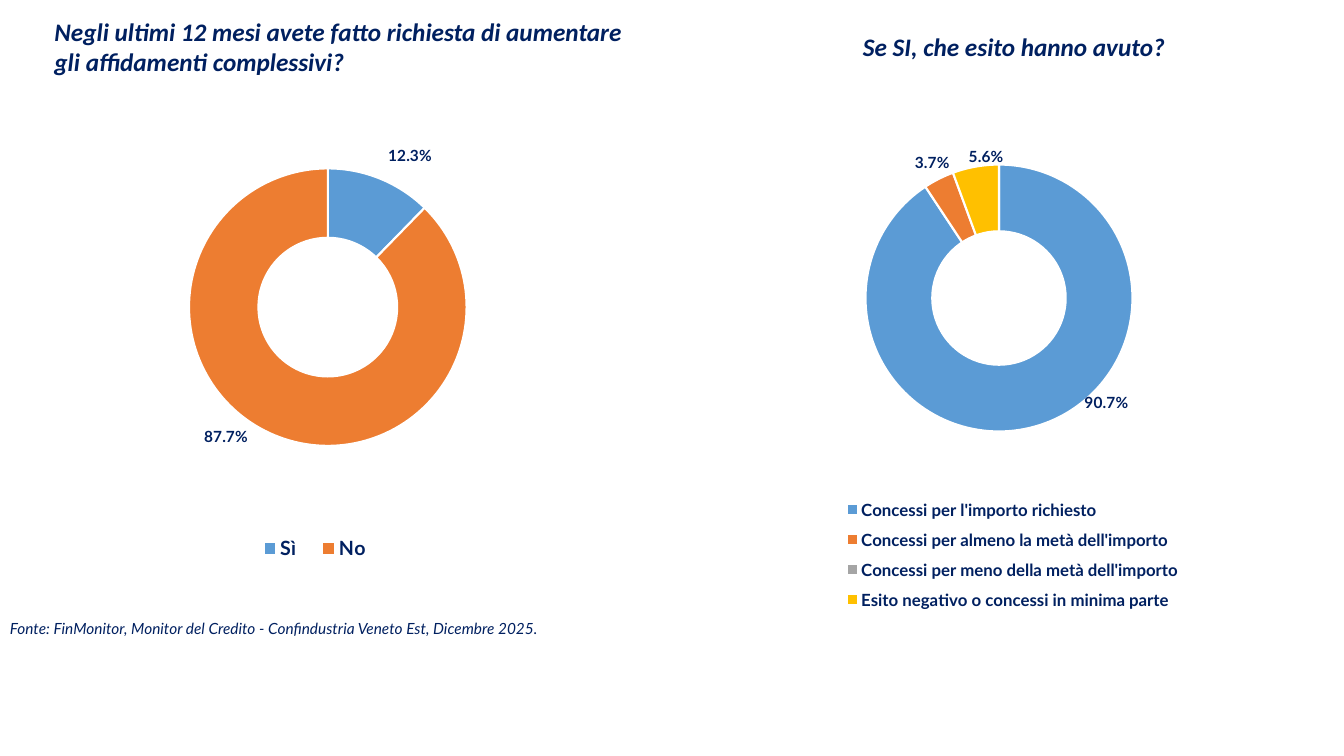
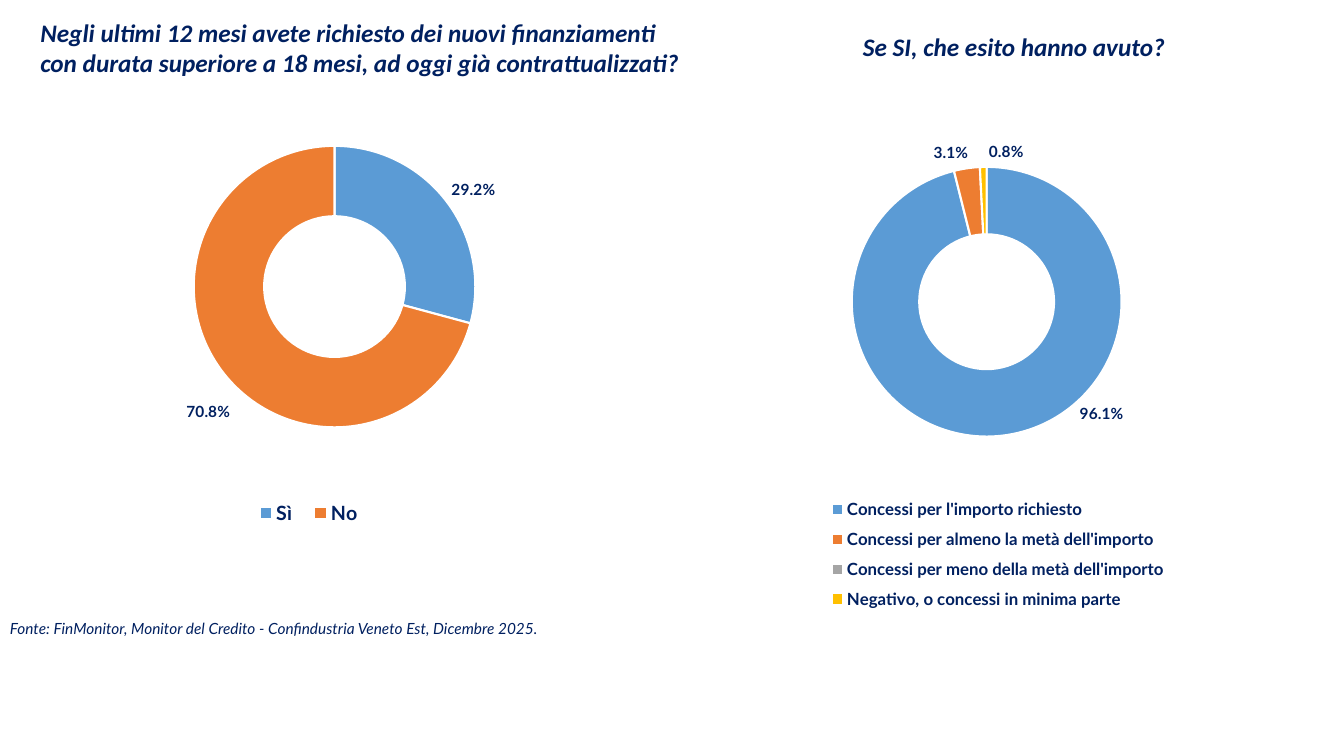
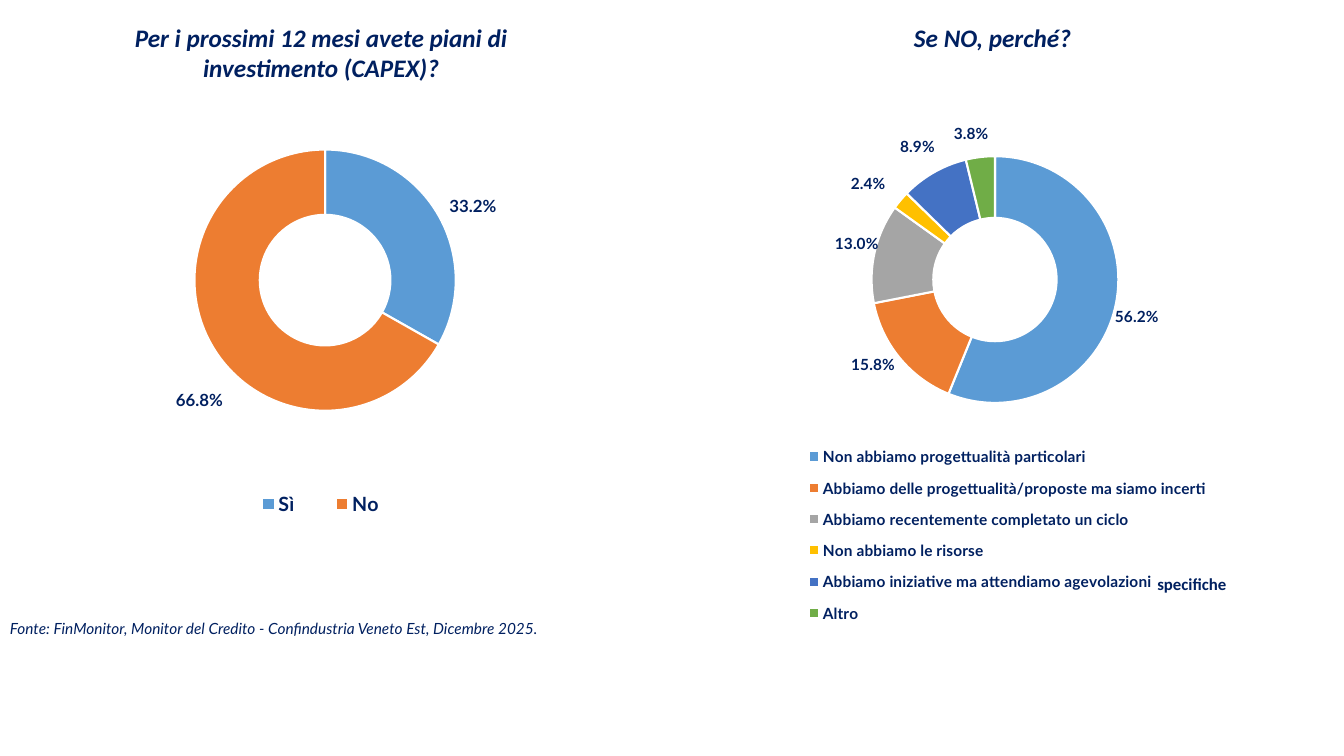
from copy import deepcopy

from pptx import Presentation
from pptx.chart.data import CategoryChartData
from pptx.dml.color import RGBColor
from pptx.enum.chart import XL_CHART_TYPE, XL_LEGEND_POSITION
from pptx.enum.text import MSO_ANCHOR, MSO_AUTO_SIZE, PP_ALIGN
from pptx.oxml import parse_xml
from pptx.oxml.ns import nsdecls
from pptx.util import Inches, Pt

DOUGHNUT = XL_CHART_TYPE.DOUGHNUT
BOTTOM = XL_LEGEND_POSITION.BOTTOM
TOP = MSO_ANCHOR.TOP
NO_AUTOFIT = MSO_AUTO_SIZE.NONE
LEFT, CENTER = PP_ALIGN.LEFT, PP_ALIGN.CENTER

color = RGBColor.from_string
NAVY = "002060"
WHITE = "FFFFFF"
SLICE_COLORS = ["5B9BD5", "ED7D31", "A5A5A5", "FFC000", "4472C4", "70AD47"]
HEADING_FONT, BODY_FONT = "Calibri", "Lato"
TITLE_ONLY = 5

SOURCE = "Fonte: FinMonitor, Monitor del Credito - Confindustria Veneto Est, Dicembre 2025."
SOURCE_AT = (0, 6.09, 6.97, 0.29)
YES_NO = ["Sì", "No"]
GRANTED = [
    "Concessi per l'importo richiesto",
    "Concessi per almeno la metà dell'importo",
    "Concessi per meno della metà dell'importo",
]
OUTCOME = {"text": "Se SI, che esito hanno avuto?", "at": (8.46, 0.26, 3.45, 0.4), "align": LEFT}

# Plot, legend and label shifts are percentages of the chart's width and height.
SLIDES = [
    {
        "headings": [
            {"text": "Negli ultimi 12 mesi avete fatto richiesta di aumentare gli affidamenti complessivi?",
             "at": (0.44, 0.11, 6.06, 0.71), "align": LEFT},
            OUTCOME,
        ],
        "charts": [
            {"at": (0, 0.99, 6.67, 4.97), "categories": YES_NO, "values": [0.123, 0.877],
             "plot": (28.1, 13.7, 41.3, 55.4), "legend": (36.3, 85.5, 21.1, 8),
             "shifts": [(6.4, -11), (-9.3, 6.6)], "legend_size": 14, "label_size": 11},
            {"at": (6.67, 0.99, 6.67, 5.26),
             "categories": GRANTED + ["Esito negativo o concessi in minima parte"],
             "values": [0.907, 0.037, 0, 0.056],
             "plot": (28.7, 12.2, 39.7, 50.4), "legend": (24.6, 73.6, 52, 24.5),
             "shifts": [(11.7, 1.5), (-3.2, -8.8), None, (0.7, -8.2)],
             "legend_size": 12, "label_size": 11},
        ],
    },
    {
        "headings": [
            {"text": "Negli ultimi 12 mesi avete richiesto dei nuovi finanziamenti con durata "
                     "superiore a 18 mesi, ad oggi già contrattualizzati?",
             "at": (0.3, 0.12, 6.62, 0.71), "align": LEFT},
            OUTCOME,
        ],
        "charts": [
            {"at": (0, 0.64, 6.67, 5.31), "categories": YES_NO, "values": [0.292, 0.708],
             "plot": (28.8, 15.2, 41.9, 52.6), "legend": (36.3, 79.8, 19.3, 8),
             "shifts": [(8.2, -6.2), (-6.3, 11.2)], "legend_size": 14, "label_size": 11},
            {"at": (6.46, 1.13, 6.88, 5.15),
             "categories": GRANTED + ["Negativo, o concessi in minima parte"],
             "values": [0.961, 0.031, 0, 0.008],
             "plot": (28.9, 10.2, 38.9, 52), "legend": (24.9, 72.3, 50.3, 25),
             "shifts": [(14.8, 2.1), (-3, -9.6), None, (3.2, -9.5)],
             "legend_size": 12, "label_size": 11},
        ],
    },
    {
        "headings": [
            {"text": "Per i prossimi 12 mesi avete piani di investimento (CAPEX)?",
             "at": (0.82, 0.17, 4.73, 0.71), "align": CENTER},
            {"text": "Se NO, perché?", "at": (6.36, 0.17, 6.97, 0.4), "align": CENTER},
        ],
        "charts": [
            {"at": (0, 0.48, 6.67, 5.61), "categories": YES_NO, "values": [0.332, 0.668],
             "plot": (28.9, 17.9, 38.9, 46.2), "legend": (33.8, 76.6, 27.8, 8),
             "shifts": [(9.4, -4.5), (-6.1, 12.4)], "legend_size": 14, "label_size": 12},
            {"at": (6.67, 0.69, 6.67, 5.61),
             "categories": [
                 "Non abbiamo progettualità particolari",
                 "Abbiamo delle progettualità/proposte ma siamo incerti",
                 "Abbiamo recentemente completato un ciclo",
                 "Non abbiamo le risorse",
                 "Abbiamo iniziative ma attendiamo agevolazioni",
                 "Altro",
             ],
             "values": [0.562, 0.158, 0.13, 0.024, 0.089, 0.038],
             "plot": (29.6, 15.3, 36.7, 43.7), "legend": (18.9, 64.6, 62, 35.4),
             "shifts": [(7.6, 3.3), (-7.5, 4.5), (-7.1, -3), (-8.3, -6.5), (-4.7, -9.4), (-1.9, -9.7)],
             "legend_size": 11, "label_size": 11},
        ],
    },
]


def write(box, text, at, size, font_name, bold=False, italic=False, align=LEFT):
    """Place a box and fill it with one navy paragraph."""
    box.left, box.top, box.width, box.height = map(Inches, at)
    frame = box.text_frame
    frame.word_wrap = True
    frame.auto_size = NO_AUTOFIT
    frame.vertical_anchor = TOP
    frame.text = text
    para = frame.paragraphs[0]
    para.alignment = align
    para.font.name = font_name
    para.font.size = Pt(size)
    para.font.bold = bold
    para.font.italic = italic
    para.font.color.rgb = color(NAVY)


def manual_layout(percentages, modes=""):
    """Return a c:layout element for x, y and, if given, width and height."""
    parts = "".join(
        f'<c:{tag} val="{value / 100:.3f}"/>' for tag, value in zip("xywh", percentages)
    )
    return parse_xml(
        f'<c:layout {nsdecls("c")}><c:manualLayout>{modes}{parts}</c:manualLayout></c:layout>'
    )


EDGES = '<c:xMode val="edge"/><c:yMode val="edge"/>'
INNER = '<c:layoutTarget val="inner"/>'

deck = Presentation()
deck.slide_width, deck.slide_height = Inches(13.33), Inches(7.5)

for content in SLIDES:
    page = deck.slides.add_slide(deck.slide_layouts[TITLE_ONLY])
    subheading = page.shapes.add_textbox(0, 0, 0, 0)
    for box, heading in zip((page.shapes.title, subheading), content["headings"]):
        write(box, size=18, font_name=HEADING_FONT, bold=True, italic=True, **heading)

    for item in content["charts"]:
        data = CategoryChartData(number_format="0.0%")
        data.categories = item["categories"]
        data.add_series("Series 1", item["values"])
        chart = page.shapes.add_chart(DOUGHNUT, *map(Inches, item["at"]), data).chart
        chart.has_title = False
        chart.font.name = HEADING_FONT
        chart.font.size = Pt(10)
        chart.font.color.rgb = color(NAVY)
        chart.has_legend = True
        chart.legend.position = BOTTOM
        chart.legend.include_in_layout = False

        plot = chart.plots[0]
        plot.vary_by_categories = True
        series = plot.series[0]
        for index in range(len(item["values"])):
            slice_format = series.points[index].format
            slice_format.fill.solid()
            slice_format.fill.fore_color.rgb = color(SLICE_COLORS[index])
            slice_format.line.color.rgb = color(WHITE)
            slice_format.line.width = Pt(1.5)

        labels = series.data_labels
        labels.show_value = True
        labels.number_format = "0.0%"
        labels.number_format_is_linked = False
        for font, size in ((labels.font, item["label_size"]), (chart.legend.font, item["legend_size"])):
            font.name = BODY_FONT
            font.size = Pt(size)
            font.bold = True
            font.color.rgb = color(NAVY)

        root = chart.element
        for hole in root.xpath(".//c:holeSize"):
            hole.set("val", "55")
        for old_layout in root.xpath(".//c:plotArea/c:layout | .//c:legend/c:layout"):
            old_layout.getparent().remove(old_layout)
        root.xpath(".//c:plotArea")[0].insert(0, manual_layout(item["plot"], INNER + EDGES))
        root.xpath(".//c:legend/c:legendPos")[0].addnext(manual_layout(item["legend"], EDGES))

        label_group = root.xpath(".//c:ser/c:dLbls")[0]
        for leader in label_group.xpath("c:showLeaderLines"):
            leader.set("val", "0")
        shared_settings = label_group.xpath("*[not(self::c:showLeaderLines)]")
        for index, shift in enumerate(item["shifts"]):
            label = parse_xml(f'<c:dLbl {nsdecls("c")}><c:idx val="{index}"/></c:dLbl>')
            if shift is None:
                label.append(parse_xml(f'<c:delete {nsdecls("c")} val="1"/>'))
            else:
                label.append(manual_layout(shift))
                label.extend(deepcopy(shared_settings))
            label_group.insert(index, label)

    write(page.shapes.add_textbox(0, 0, 0, 0), SOURCE, SOURCE_AT, 11, BODY_FONT, italic=True)

legend_ending = page.shapes.add_textbox(0, 0, 0, 0)
write(legend_ending, "specifiche", (11.38, 5.64, 1.06, 0.3), 12, HEADING_FONT, bold=True)

deck.save("out.pptx")
